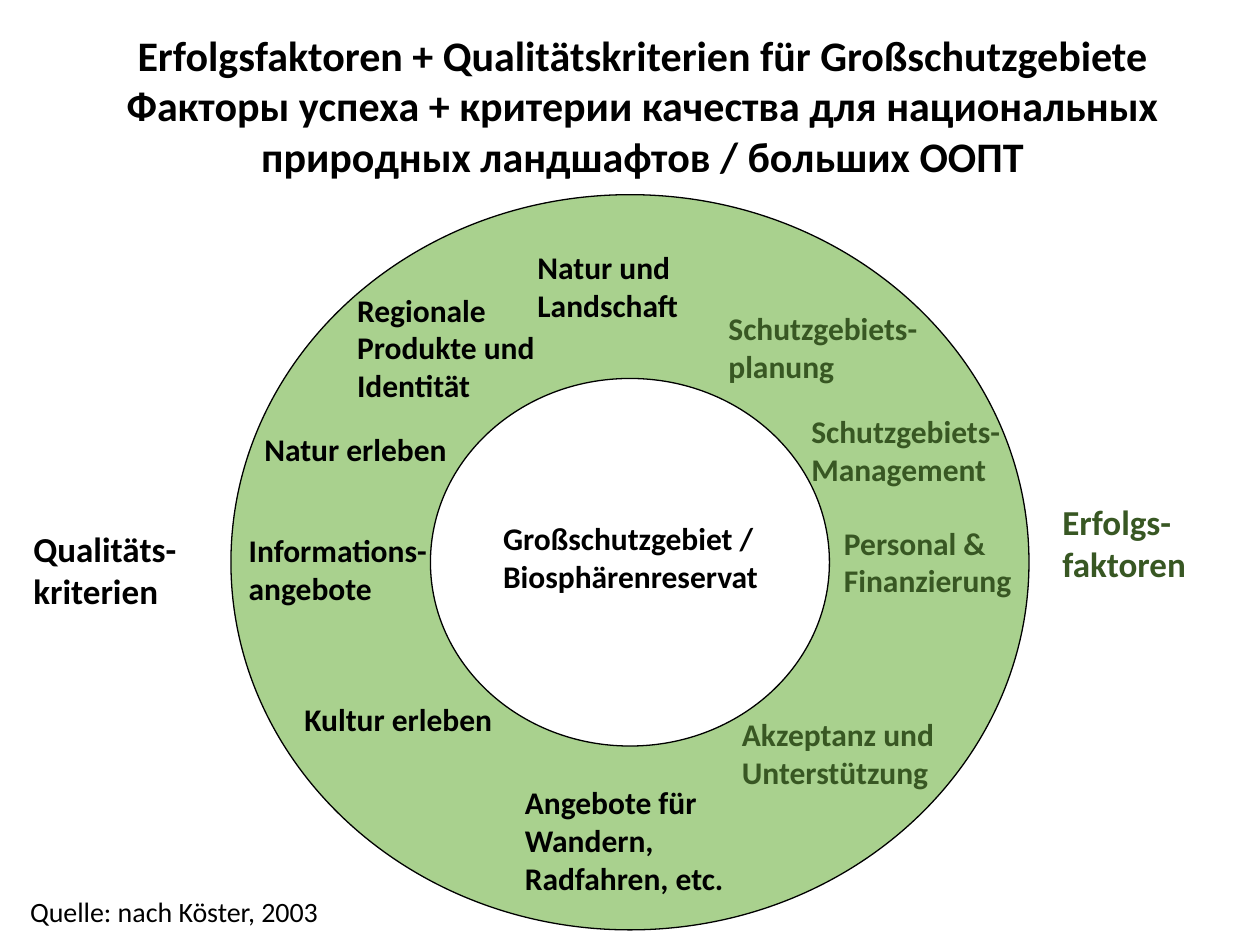
"""Build a slide with a ring of success factors and quality criteria around a protected area."""
import math

import pptx
import pptx.dml.color
import pptx.enum.shapes
import pptx.enum.text
import pptx.oxml.ns
import pptx.util

SLIDE_W, SLIDE_H = pptx.util.Inches(10), pptx.util.Inches(7.5)
BLACK, WHITE, GREEN, DARK_GREEN = "000000", "FFFFFF", "A9D18E", "385723"
FONT = "Calibri"

CRITERIA = [
    ("Natur und Landschaft", 41.67, 25.56, 18.8, 9.4),
    ("Kultur erleben", 23.17, 73.47, 17.5, 9.4),
    ("Angebote für\nWandern, Radfahren, etc.", 40.67, 82.22, 19.2, 13.33),
    ("Informations-\nangebote", 18.75, 55.56, 17.5, 9.4),
    ("Natur erleben", 20, 44.8, 17.5, 9.4),
    ("Regionale Produkte und Identität", 27.36, 30.1, 17.5, 13.33),
]
FACTORS = [
    ("Schutzgebiets-planung", 56.83, 32.04, 18.3, 9.4),
    ("Schutzgebiets-Management", 63.4, 42.93, 17.5, 9.4),
    ("Personal & Finanzierung", 66, 54.76, 20, 9.4),
    ("Akzeptanz und Unterstützung", 57.9, 75.03, 20, 9.4),
]


def px(share):
    """Return a horizontal length from a percentage of the slide width."""
    return round(SLIDE_W * share / 100)


def py(share):
    """Return a vertical length from a percentage of the slide height."""
    return round(SLIDE_H * share / 100)


def set_color(color_format, value):
    """Apply a hex colour string to a colour format."""
    color_format.rgb = pptx.dml.color.RGBColor.from_string(value)


def set_fill(sp, value):
    """Give a shape a solid fill."""
    sp.fill.solid()
    set_color(sp.fill.fore_color, value)


def write(tf, paragraphs, size, color, bold, align):
    """Fill a text frame with paragraphs of one style."""
    for i, text in enumerate(paragraphs):
        p = tf.add_paragraph() if i else tf.paragraphs[0]
        p.text = text
        p.alignment = align
        for r in p.runs:
            r.font.name, r.font.size, r.font.bold = FONT, pptx.util.Pt(size), bold
            set_color(r.font.color, color)


def add_title(s, paragraphs, x, y, w, h):
    """Add the centred heading on a white rectangle."""
    sp = s.shapes.add_shape(
        pptx.enum.shapes.MSO_SHAPE.RECTANGLE, px(x), py(y), px(w), py(h))
    sp.shadow.inherit = False
    set_fill(sp, WHITE)
    sp.line.fill.background()
    tf = sp.text_frame
    tf.word_wrap = False
    tf.vertical_anchor = pptx.enum.text.MSO_ANCHOR.MIDDLE
    write(tf, paragraphs, 24, BLACK, True, pptx.enum.text.PP_ALIGN.CENTER)


def add_label(s, text, x, y, w, h, size=18, color=BLACK, bold=True, wrap=True):
    """Add a left-aligned text box that grows with its text."""
    tf = s.shapes.add_textbox(px(x), py(y), px(w), py(h)).text_frame
    tf.word_wrap = wrap
    tf.auto_size = pptx.enum.text.MSO_AUTO_SIZE.SHAPE_TO_FIT_TEXT
    write(tf, [text], size, color, bold, pptx.enum.text.PP_ALIGN.LEFT)


def ellipse_points(cx, cy, rx, ry, turn):
    """Return the start and the Bézier points of four quarter arcs."""
    k = 4 / 3 * (math.sqrt(2) - 1)
    units = [(-1, 0)]
    for c, d in ((-1, 0), (0, -1), (1, 0), (0, 1)):
        units += [(c - k * d, d + k * c), (k * c - d, c + k * d), (-d, c)]
    return [(px(cx + rx * u), py(cy + turn * ry * v)) for u, v in units]


def curve_segments(sp):
    """Turn every three line segments of a freeform into one Bézier curve."""
    qn = pptx.oxml.ns.qn
    lines = list(sp._element.iter(qn("a:lnTo")))
    for i in range(0, len(lines), 3):
        curve = lines[i].makeelement(qn("a:cubicBezTo"))
        lines[i].addprevious(curve)
        for line in lines[i:i + 3]:
            curve.append(line[0])
            line.getparent().remove(line)


def add_ring(s, cx, cy, rx, ry, hole):
    """Add an elliptical ring whose hole is a share of the outer radii."""
    outer = ellipse_points(cx, cy, rx, ry, 1)
    inner = ellipse_points(cx, cy, rx * hole, ry * hole, -1)
    builder = s.shapes.build_freeform(*outer[0])
    builder.add_line_segments(outer[1:], close=True)
    builder.move_to(*inner[0])
    builder.add_line_segments(inner[1:], close=True)
    sp = builder.convert_to_shape()
    curve_segments(sp)
    sp.shadow.inherit = False
    set_fill(sp, GREEN)
    set_color(sp.line.color, BLACK)
    sp.line.width = pptx.util.Pt(0.75)


def main():
    """Build and save the slide."""
    prs = pptx.Presentation()
    prs.slide_width, prs.slide_height = SLIDE_W, SLIDE_H
    s = prs.slides.add_slide(prs.slide_layouts[6])
    add_title(s, [
        "Erfolgsfaktoren + Qualitätskriterien für Großschutzgebiete",
        "Факторы успеха + критерии качества для национальных\n"
        "природных ландшафтов / больших ООПТ",
    ], 3.7, 2.27, 94.6, 17.73)
    add_ring(s, 50, 59.5, 31.67, 38.9, 0.5)
    for label in CRITERIA:
        add_label(s, *label)
    for label in FACTORS:
        add_label(s, *label, color=DARK_GREEN)
    add_label(s, "Großschutzgebiet /\nBiosphärenreservat", 38.95, 54.27, 22.6, 9.4, wrap=False)
    add_label(s, "Qualitäts-\nkriterien", 1.67, 55.2, 15, 10.27, size=20)
    add_label(s, "Erfolgs-faktoren", 83.33, 52.35, 15, 10.27, size=20, color=DARK_GREEN)
    add_label(s, "Quelle: nach Köster, 2003", 1.4, 94, 26, 4.93, size=16, bold=False, wrap=False)
    prs.save("out.pptx")


if __name__ == "__main__":
    main()
